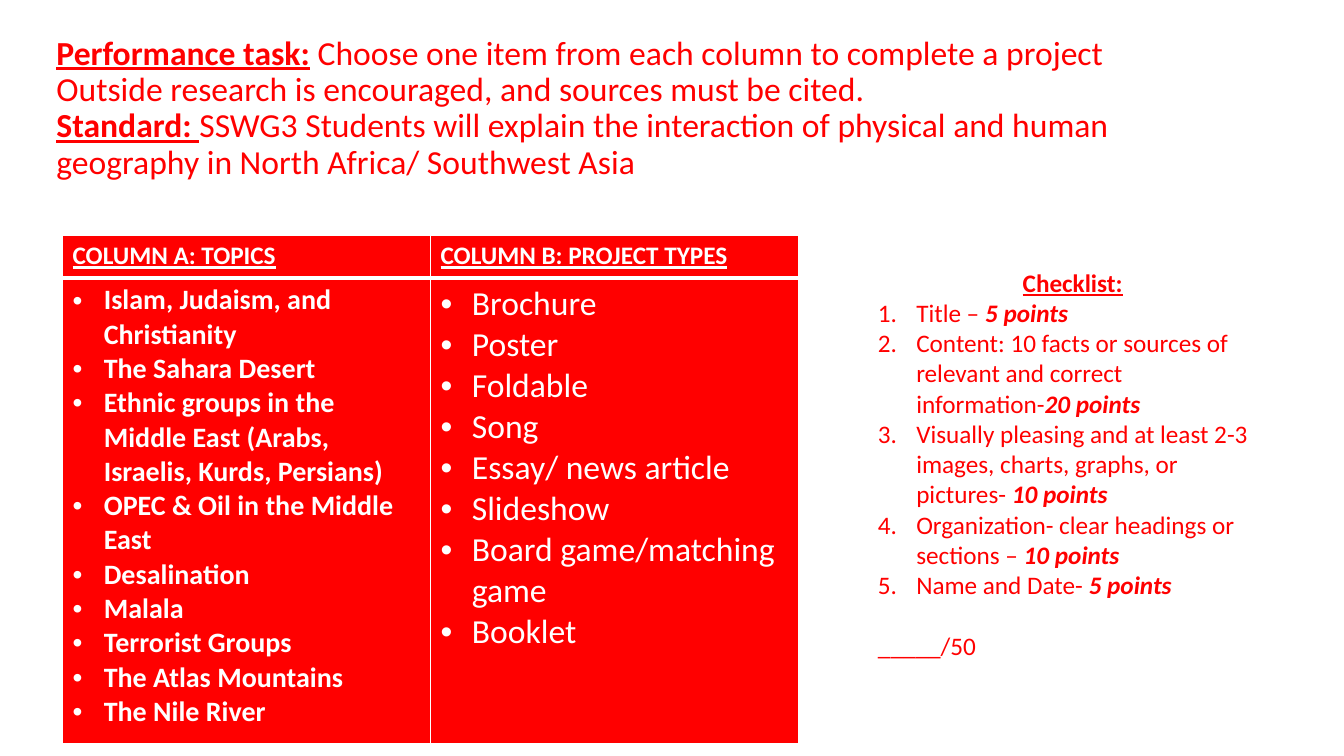
"""Build a slide with a performance task, a table of choices and a checklist."""
import pptx
import pptx.chart.data
import pptx.dml.color
import pptx.enum.text
import pptx.oxml
import pptx.util
from pptx.util import Inches

RED, WHITE = "FF0000", "FFFFFF"
NS = 'xmlns:a="http://schemas.openxmlformats.org/drawingml/2006/main"'
DOT = ['<a:buFont {} typeface="Arial"/>', '<a:buChar {} char="•"/>']
NUM = ['<a:buFont {} typeface="+mj-lt"/>', '<a:buAutoNum {} type="arabicPeriod"/>']


def style(font, size, color, bold=False, under=False):
    font.name = "Calibri"
    font.size = pptx.util.Pt(size)
    font.color.rgb = pptx.dml.color.RGBColor.from_string(color)
    font.bold = bold
    font.underline = under


def mark(para, indent, bullet):
    props = para._p.get_or_add_pPr()
    props.set("marL", str(Inches(indent)))
    props.set("indent", str(-Inches(indent)))
    for part in bullet:
        props.append(pptx.oxml.parse_xml(part.format(NS)))


deck = pptx.Presentation()
deck.slide_width, deck.slide_height = Inches(13.33), Inches(7.5)
slide = deck.slides.add_slide(deck.slide_layouts[5])

title = slide.shapes.title
title.left, title.top = Inches(0.46), Inches(0.33)
title.width, title.height = Inches(11.5), Inches(1.86)
frame = title.text_frame
frame.auto_size = pptx.enum.text.MSO_AUTO_SIZE.NONE
frame.vertical_anchor = pptx.enum.text.MSO_ANCHOR.TOP
frame.margin_top = Inches(0.03)
para = frame.paragraphs[0]
para.alignment = pptx.enum.text.PP_ALIGN.LEFT
para.line_spacing = 0.9
style(para.font, 24, RED)
tasks = [
    ("Performance task:", " Choose one item from each column to complete a project  "
     "Outside research is encouraged, and sources must be cited. "),
    ("Standard: ", "SSWG3 Students will explain the interaction of physical and "
     "human geography in North Africa/ Southwest Asia"),
]
for row, (head, text) in enumerate(tasks):
    if row:
        para.add_line_break()
    for strong, words in ((True, head), (False, text)):
        run = para.add_run()
        run.text = words
        style(run.font, 24, RED, strong, strong)

columns = [
    ("COLUMN A: TOPICS", 20, True, [
        "Islam, Judaism, and Christianity", "The Sahara Desert",
        "Ethnic groups in the Middle East (Arabs, Israelis, Kurds, Persians)",
        "OPEC & Oil in the Middle East", "Desalination", "Malala",
        "Terrorist Groups", "The Atlas Mountains", "The Nile River"]),
    ("COLUMN B: PROJECT TYPES", 24, False, [
        "Brochure", "Poster", "Foldable", "Song", "Essay/ news article",
        "Slideshow", "Board game/matching game", "Booklet"]),
]
table = slide.shapes.add_table(
    2, 2, Inches(0.62), Inches(2.34), Inches(7.3), Inches(5.04)).table
table.rows[0].height, table.rows[1].height = Inches(0.42), Inches(4.62)
for col, (head, size, bold, items) in enumerate(columns):
    top, body = table.cell(0, col), table.cell(1, col)
    top.text = head
    style(top.text_frame.paragraphs[0].font, 18, WHITE, True, True)
    body.text = "\n".join(items)
    for para in body.text_frame.paragraphs:
        style(para.font, size, WHITE, bold)
        mark(para, 0.31, DOT)
    for cell, thick in ((top, "B"), (body, "T")):
        cell.fill.solid()
        cell.fill.fore_color.rgb = pptx.dml.color.RGBColor.from_string(RED)
        props = cell._tc.get_or_add_tcPr()
        for spot, side in enumerate("LRTB"):
            width = pptx.util.Pt(3 if side == thick else 1)
            props.insert(spot, pptx.oxml.parse_xml(
                f'<a:ln{side} {NS} w="{width}"><a:solidFill>'
                f'<a:srgbClr val="{WHITE}"/></a:solidFill></a:ln{side}>'))

box = slide.shapes.add_textbox(Inches(8.61), Inches(2.6), Inches(4.06), Inches(4.34))
frame = box.text_frame
frame.word_wrap = True
para = frame.paragraphs[0]
para.text = "Checklist:"
para.alignment = pptx.enum.text.PP_ALIGN.CENTER
style(para.font, 18, RED, True, True)
checks = [
    ("Title – ", 5),
    ("Content: 10 facts or sources of relevant and correct information-", 20),
    ("Visually pleasing and at least 2-3 images, charts, graphs, or pictures- ", 10),
    ("Organization- clear headings or sections – ", 10),
    ("Name and Date- ", 5),
]
for text, points in checks:
    para = frame.add_paragraph()
    mark(para, 0.38, NUM)
    for strong, words in ((False, text), (True, f"{points} points")):
        run = para.add_run()
        run.text = words
        style(run.font, 18, RED, strong)
        run.font.italic = strong
score = frame.add_paragraph()
score.text = "_____/50"
score.space_before = pptx.util.Pt(22)
style(score.font, 18, RED)

deck.save("out.pptx")
